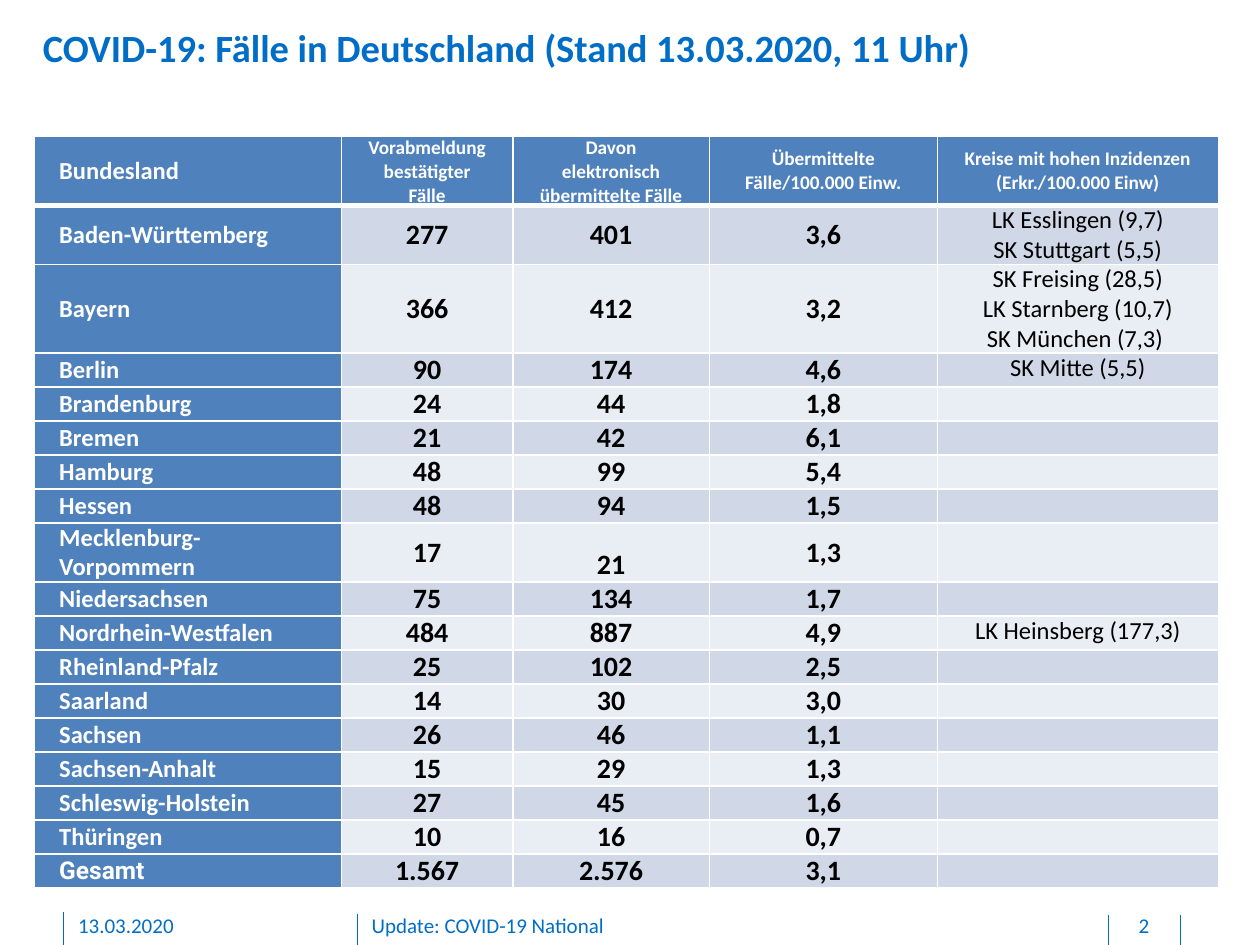
from typing import NamedTuple

from lxml import etree
from pptx import Presentation
from pptx import util as u
from pptx.dml.color import RGBColor
from pptx.enum import shapes, text
from pptx.oxml import ns

COLOURS = {
    "accent": "006EC7",
    "header": "4F81BD",
    "odd": "D0D8E8",
    "even": "E9EDF4",
    "white": "FFFFFF",
    "black": "000000",
}
LEFT, CENTRE = text.PP_ALIGN.LEFT, text.PP_ALIGN.CENTER
TOP, MIDDLE, BOTTOM = (
    text.MSO_ANCHOR.TOP, text.MSO_ANCHOR.MIDDLE, text.MSO_ANCHOR.BOTTOM)


class State(NamedTuple):
    name: str
    reported: str
    submitted: str
    incidence: str
    districts: str = ""
    height: float = 0.27


class Label(NamedTuple):
    content: str
    left: float
    width: float
    alignment: text.PP_ALIGN = LEFT


class Divider(NamedTuple):
    left: float
    top: float


class Style(NamedTuple):
    size: float
    colour: str
    bold: bool = False
    alignment: text.PP_ALIGN = CENTRE
    gap: float = 2
    name: str = "Calibri"


HEADINGS = [
    "Bundesland",
    "Vorabmeldung bestätigter Fälle",
    "Davon elektronisch übermittelte Fälle",
    "Übermittelte Fälle/100.000 Einw.",
    "Kreise mit hohen Inzidenzen (Erkr./100.000 Einw)",
]
STATES = [
    State("Baden-Württemberg", "277", "401", "3,6",
          "LK Esslingen (9,7)\vSK Stuttgart (5,5)", 0.47),
    State("Bayern", "366", "412", "3,2",
          "SK Freising (28,5)\nLK Starnberg (10,7)\nSK München (7,3) ", 0.7),
    State("Berlin", "90", "174", "4,6", "SK Mitte (5,5)"),
    State("Brandenburg", "24", "44", "1,8"),
    State("Bremen", "21", "42", "6,1"),
    State("Hamburg", "48", "99", "5,4"),
    State("Hessen", "48", "94", "1,5"),
    State("Mecklenburg-Vorpommern", "17", "21", "1,3", height=0.47),
    State("Niedersachsen", "75", "134", "1,7"),
    State("Nordrhein-Westfalen", "484", "887", "4,9", "LK Heinsberg (177,3)"),
    State("Rheinland-Pfalz", "25", "102", "2,5"),
    State("Saarland", "14", "30", "3,0"),
    State("Sachsen", "26", "46", "1,1"),
    State("Sachsen-Anhalt", "15", "29", "1,3"),
    State("Schleswig-Holstein", "27", "45", "1,6"),
    State("Thüringen", "10", "16", "0,7"),
    State("Gesamt", "1.567", "2.576", "3,1"),
]
COLUMN_WIDTHS = [2.44, 1.36, 1.56, 1.81, 2.23]
HEADER_HEIGHT = 0.54
DIVIDERS = [Divider(0.5, 7.24), Divider(2.84, 7.25),
            Divider(8.8, 7.26), Divider(9.37, 7.26)]
FOOTERS = [
    Label("13.03.2020", 0.62, 2.03),
    Label("Update: COVID-19 National", 2.95, 5.67),
    Label("2", 8.81, 0.54, CENTRE),
]


def colour(name: str) -> RGBColor:
    return RGBColor.from_string(COLOURS[name])


def apply(target, values: dict) -> None:
    for attribute, value in values.items():
        setattr(target, attribute, value)


def write(frame, content: str, style: Style) -> None:
    frame.text = content
    for index, para in enumerate(frame.paragraphs):
        apply(para, {"alignment": style.alignment,
                     "space_before": u.Pt(style.gap if index else 0),
                     "space_after": u.Pt(style.gap)})
        for span in para.runs:
            apply(span.font, {"size": u.Pt(style.size), "bold": style.bold,
                              "name": style.name})
            span.font.color.rgb = colour(style.colour)
        if not para.runs:
            etree.SubElement(para._p, ns.qn("a:endParaRPr"),
                             sz=str(int(style.size * 100)))


def set_frame(frame, bottom: float = 0) -> None:
    apply(frame, {"word_wrap": True, "vertical_anchor": TOP,
                  "margin_left": 0, "margin_right": 0, "margin_top": 0,
                  "margin_bottom": u.Inches(bottom)})


def place(shape, left: float, top: float, width: float, height: float) -> None:
    apply(shape, {"left": u.Inches(left), "top": u.Inches(top),
                  "width": u.Inches(width), "height": u.Inches(height)})


def add_borders(cell, row: int) -> None:
    points = {"L": 1, "R": 1, "T": 3 if row == 1 else 1,
              "B": 3 if row == 0 else 1}
    properties = cell._tc.get_or_add_tcPr()
    for index, (side, width) in enumerate(points.items()):
        line = etree.Element(ns.qn(f"a:ln{side}"), w=str(u.Pt(width)))
        fill = etree.SubElement(line, ns.qn("a:solidFill"))
        etree.SubElement(fill, ns.qn("a:srgbClr"), val=COLOURS["white"])
        properties.insert(index, line)


def cell_style(row: int, column: int) -> Style:
    if column == 0:
        name = "Roboto" if row == len(STATES) else "Calibri"
        return Style(14, "white", True, LEFT, name=name)
    if row == 0:
        return Style(11, "white", True)
    if column == 4:
        return Style(14, "black", gap=0)
    return Style(16, "black", True)


def cell_anchor(row: int, column: int) -> text.MSO_ANCHOR:
    if (row, column) == (0, 2) or (row and column == 4):
        return TOP
    if column == 2 and 3 <= row < len(STATES):
        return BOTTOM
    return MIDDLE


def fill_cell(cell, content: str, row: int, column: int) -> None:
    side = u.Inches(0 if row and column in (2, 3) else 0.2)
    apply(cell, {"margin_left": side, "margin_right": side, "margin_top": 0,
                 "margin_bottom": 0,
                 "vertical_anchor": cell_anchor(row, column)})
    cell.fill.solid()
    band = "odd" if row % 2 else "even"
    cell.fill.fore_color.rgb = colour(
        "header" if row == 0 or column == 0 else band)
    add_borders(cell, row)
    write(cell.text_frame, content, cell_style(row, column))


def add_case_table(page) -> None:
    rows = [HEADINGS] + [list(state[:5]) for state in STATES]
    heights = [HEADER_HEIGHT] + [state.height for state in STATES]
    table = page.shapes.add_table(
        len(rows), len(HEADINGS), u.Inches(0.27), u.Inches(1.08),
        u.Inches(sum(COLUMN_WIDTHS)), u.Inches(sum(heights))).table
    for column, width in zip(table.columns, COLUMN_WIDTHS):
        column.width = u.Inches(width)
    for row, (contents, height) in enumerate(zip(rows, heights)):
        table.rows[row].height = u.Inches(height)
        for column, content in enumerate(contents):
            fill_cell(table.cell(row, column), content, row, column)


def add_divider(page, divider: Divider) -> None:
    left = u.Inches(divider.left)
    line = page.shapes.add_connector(
        shapes.MSO_CONNECTOR.STRAIGHT, left, u.Inches(divider.top),
        left, u.Inches(7.5))
    line.line.color.rgb = colour("accent")
    line.line.width = u.Pt(0.5)
    etree.SubElement(line._element.spPr, ns.qn("a:effectLst"))


def add_footer(page, label: Label) -> None:
    box = page.shapes.add_textbox(0, 0, 0, 0)
    place(box, label.left, 7.24, label.width, 0.21)
    set_frame(box.text_frame, 0.05)
    write(box.text_frame, label.content,
          Style(12, "accent", alignment=label.alignment, gap=0))


def main() -> None:
    deck = Presentation()
    apply(deck, {"slide_width": u.Inches(10), "slide_height": u.Inches(7.5)})
    page = deck.slides.add_slide(deck.slide_layouts[5])
    for divider in DIVIDERS:
        add_divider(page, divider)
    for label in FOOTERS:
        add_footer(page, label)
    title = page.shapes.title
    place(title, 0.34, 0.19, 8.85, 0.37)
    set_frame(title.text_frame)
    title.text_frame.auto_size = text.MSO_AUTO_SIZE.SHAPE_TO_FIT_TEXT
    write(title.text_frame,
          "COVID-19: Fälle in Deutschland (Stand 13.03.2020, 11 Uhr)",
          Style(22, "accent", True, LEFT, 0))
    add_case_table(page)
    deck.save("out.pptx")


if __name__ == "__main__":
    main()
